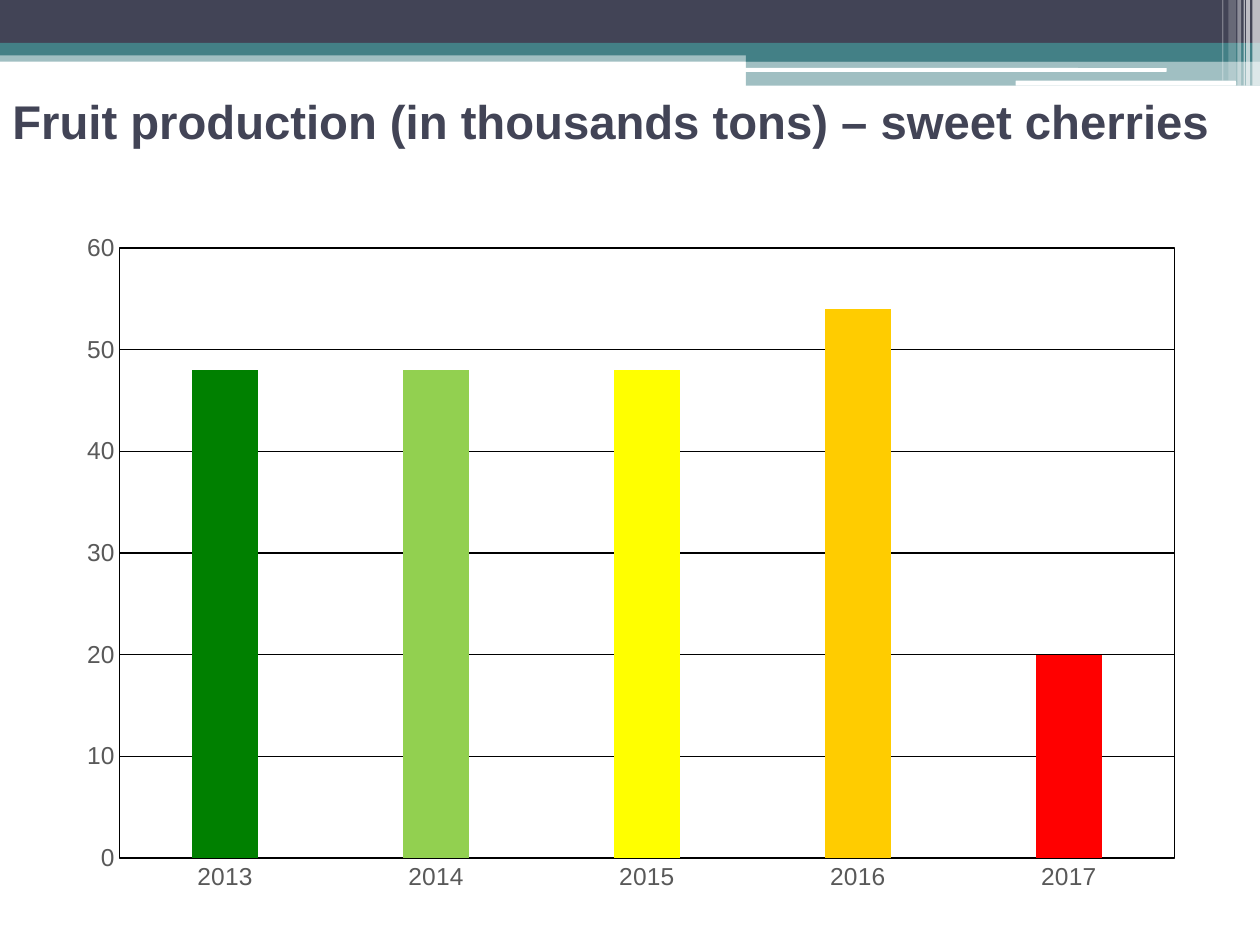
from lxml.etree import SubElement
from pptx import Presentation
from pptx.chart.data import CategoryChartData
from pptx.dml.color import RGBColor
from pptx.enum.chart import XL_CHART_TYPE as ChartType, XL_TICK_MARK as TickMark
from pptx.enum.shapes import MSO_SHAPE as Shape
from pptx.enum.text import MSO_ANCHOR as Anchor
from pptx.oxml import parse_xml
from pptx.oxml.ns import nsdecls, qn
from pptx.util import Inches, Pt

WIDTH, HEIGHT = 10, 7.5
NAVY, TEAL, WHITE, BLACK, GREY = "424456", "438086", "FFFFFF", "000000", "595959"
SPLIT = 5.92  # where the right half of the header begins

# left, top, width, height, colour, opacity in percent
BANDS = [
    (0, 0.4, WIDTH, 0.09, TEAL, 50),
    (0, 0, WIDTH, 0.34, NAVY, 100),
    (0, 0.34, WIDTH, 0.1, TEAL, 100),
    (SPLIT, 0.39, WIDTH - SPLIT, 0.1, TEAL, 100),
    (SPLIT, 0.48, WIDTH - SPLIT, 0.2, TEAL, 50),
]
HIGHLIGHTS = [(5.91, 0.54, 3.35, 0.03), (8.06, 0.64, 1.75, 0.04)]
# left, width, height, opacity in percent
STRIPES = [
    (9.94, 0.06, 0.68, 65), (9.89, 0.03, 0.68, 65), (9.87, 0.01, 0.68, 60),
    (9.82, 0.03, 0.68, 40), (9.75, 0.06, 0.64, 20), (9.7, 0.01, 0.64, 30),
]
# year: production, bar colour
HARVEST = {
    "2013": (48, "008000"),
    "2014": (48, "92D050"),
    "2015": (48, "FFFF00"),
    "2016": (54, "FFCC00"),
    "2017": (20, "FF0000"),
}


def paint(target, colour):
    """Give a fill a solid colour."""
    target.solid()
    target.fore_color.rgb = RGBColor.from_string(colour)


def style_line(line, colour, width=0.75):
    paint(line.fill, colour)
    line.width = Pt(width)


def style_font(font, size, colour, name="Arial", bold=False):
    font.size, font.name, font.bold = Pt(size), name, bold
    font.color.rgb = RGBColor.from_string(colour)


def add_bar(page, left, top, width, height, colour, opacity=100, kind=Shape.RECTANGLE):
    bar = page.shapes.add_shape(kind, *map(Inches, (left, top, width, height)))
    bar.shadow.inherit = False
    bar.line.fill.background()
    paint(bar.fill, colour)
    if opacity < 100:
        tone = bar.fill._xPr.find(".//" + qn("a:srgbClr"))
        SubElement(tone, qn("a:alpha"), val=str(opacity * 1000))
    return bar


def add_text(page, text, left, top, width, height, **style):
    box = page.shapes.add_textbox(*map(Inches, (left, top, width, height)))
    frame = box.text_frame
    frame.word_wrap = True
    frame.vertical_anchor = Anchor.MIDDLE
    span = frame.paragraphs[0].add_run()
    span.text = text
    style_font(span.font, **style)


def add_header(page):
    for band in BANDS:
        add_bar(page, *band)
    for highlight in HIGHLIGHTS:
        add_bar(page, *highlight, WHITE, kind=Shape.ROUNDED_RECTANGLE)
    for left, width, height, opacity in STRIPES:
        add_bar(page, left, 0, width, height, WHITE, opacity)


def frame_plot(chart, left, top, width, height):
    """Place the inner plot by shares of the chart and outline it."""
    area = chart._chartSpace.chart.plotArea
    for old in area.findall(qn("c:layout")):
        area.remove(old)
    shares = "".join(f'<c:{tag} val="{share}"/>' for tag, share in
                     zip("xywh", (left, top, width, height)))
    area.insert(0, parse_xml(
        f'<c:layout {nsdecls("c")}><c:manualLayout><c:layoutTarget val="inner"/>'
        f'<c:xMode val="edge"/><c:yMode val="edge"/>{shares}'
        '</c:manualLayout></c:layout>'))
    area.append(parse_xml(
        f'<c:spPr {nsdecls("c", "a")}><a:noFill/><a:ln w="9525"><a:solidFill>'
        f'<a:srgbClr val="{BLACK}"/></a:solidFill></a:ln></c:spPr>'))


def add_harvest_chart(page, left, top, width, height):
    data = CategoryChartData()
    data.categories = list(HARVEST)
    data.add_series("Series 1", [tons for tons, _ in HARVEST.values()])
    chart = page.shapes.add_chart(
        ChartType.COLUMN_CLUSTERED, *map(Inches, (left, top, width, height)), data).chart
    chart.has_title = chart.has_legend = False
    style_font(chart.font, 10, BLACK, "Cambria")

    # Axes
    years, tons = chart.category_axis, chart.value_axis
    for axis in (years, tons):
        axis.major_tick_mark = axis.minor_tick_mark = TickMark.NONE
        style_font(axis.tick_labels.font, 14, GREY)
    style_line(years.format.line, BLACK)
    tons.format.line.fill.background()
    tons.minimum_scale, tons.maximum_scale, tons.major_unit = 0, 60, 10
    style_line(tons.major_gridlines.format.line, BLACK)

    # Columns
    plot = chart.plots[0]
    plot.vary_by_categories = False
    plot.gap_width, plot.overlap = 219, -27
    series = plot.series[0]
    paint(series.format.fill, "53548A")
    for index, (_, colour) in enumerate(HARVEST.values()):
        paint(series.points[index].format.fill, colour)
    frame_plot(chart, 0.05, 0.04, 0.93, 0.89)


def main():
    deck = Presentation()
    deck.slide_width, deck.slide_height = Inches(WIDTH), Inches(HEIGHT)
    page = deck.slides.add_slide(deck.slide_layouts[6])
    add_header(page)
    add_text(page, "Fruit production (in thousands tons) – sweet cherries",
             0, 0.67, WIDTH, 0.58, size=27, colour=NAVY, bold=True)
    add_harvest_chart(page, 0.05 * WIDTH, 1.75, 0.9 * WIDTH, 5.44)
    deck.save("out.pptx")


if __name__ == "__main__":
    main()
